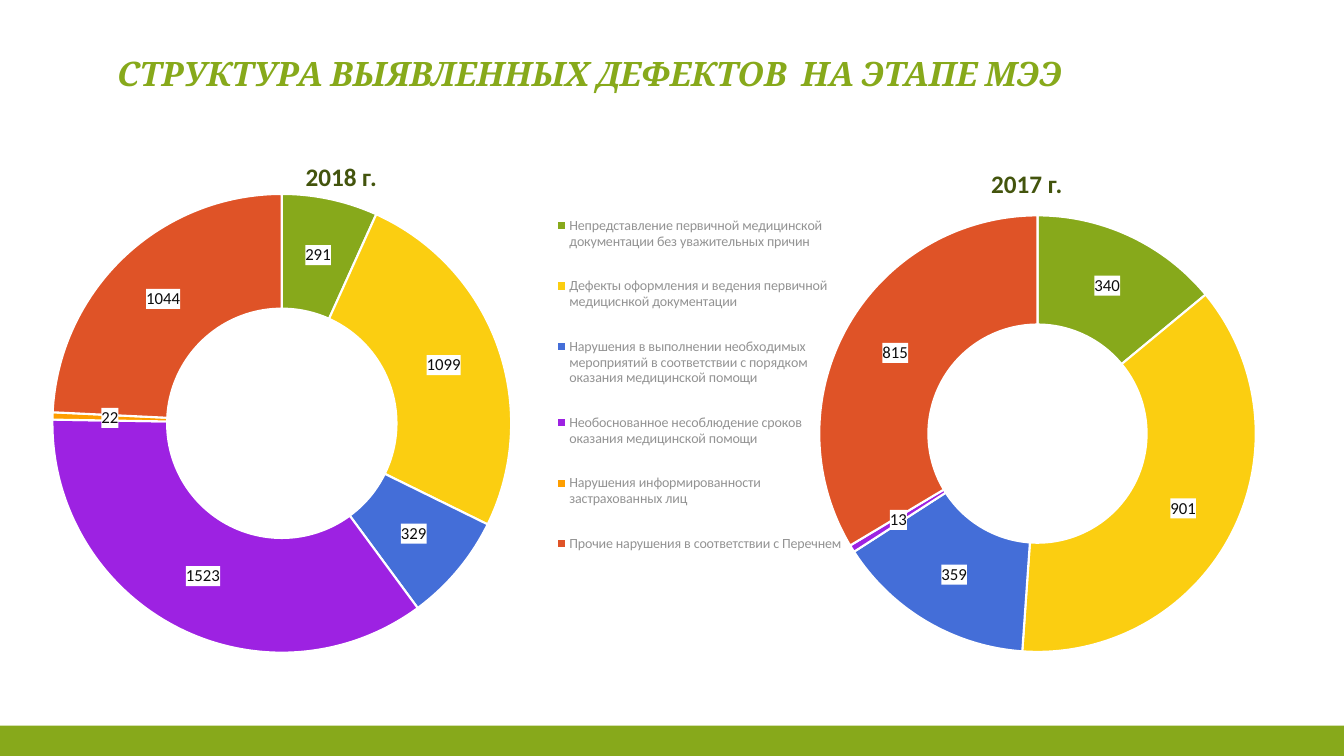
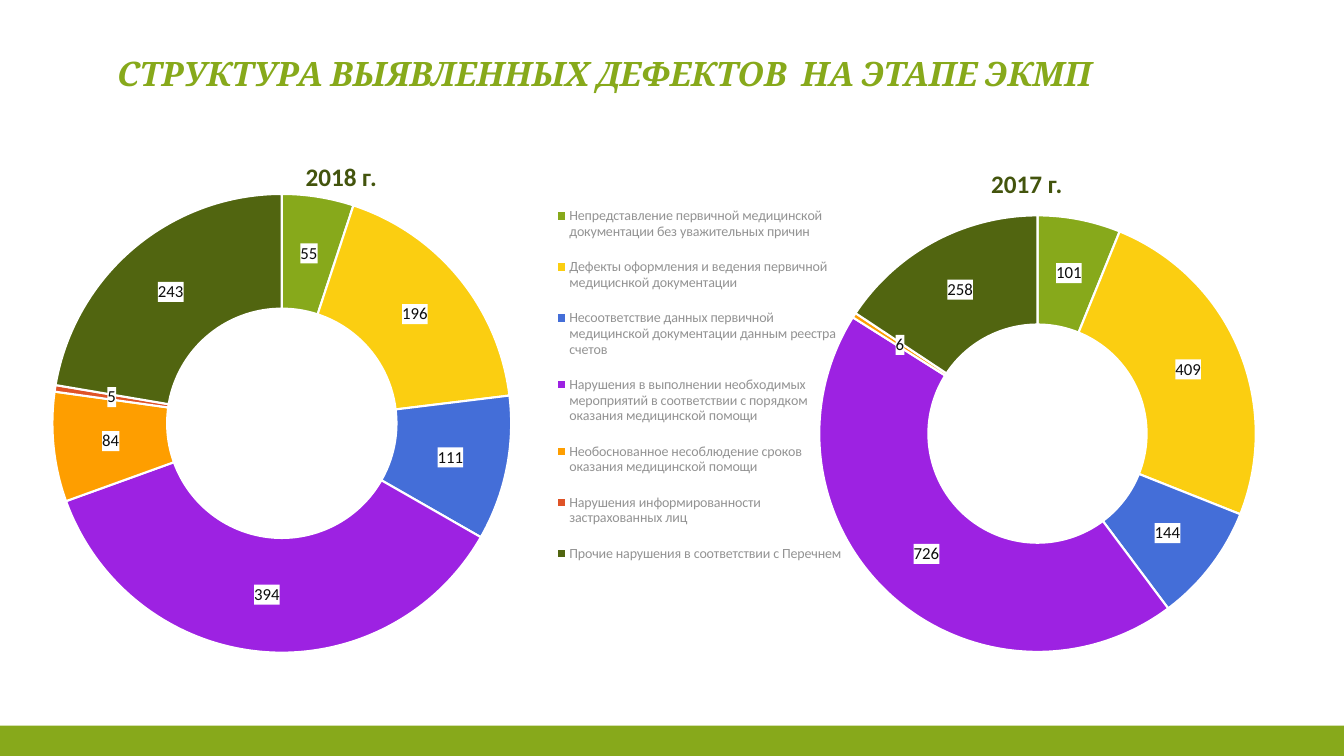
from dataclasses import dataclass

from lxml.etree import SubElement
from pptx import Presentation
from pptx.chart.chart import Chart
from pptx.chart.data import CategoryChartData
from pptx.dml.color import RGBColor
from pptx.enum.chart import XL_CHART_TYPE, XL_LEGEND_POSITION
from pptx.enum.shapes import MSO_SHAPE
from pptx.enum.text import MSO_ANCHOR, MSO_AUTO_SIZE, PP_ALIGN
from pptx.oxml import parse_xml
from pptx.oxml.ns import nsdecls, qn
from pptx.presentation import Presentation as Deck
from pptx.slide import Slide
from pptx.text.text import TextFrame
from pptx.util import Emu, Pt

EMU_PER_PX = 9525
TITLE_ONLY = 5


def px(n: int) -> Emu:
    return Emu(n * EMU_PER_PX)


@dataclass(frozen=True)
class Theme:
    green: str = "87A91B"
    year: str = "43540D"
    legend: str = "939393"
    chart: str = "595959"
    label: str = "0D0D0D"
    white: str = "FFFFFF"
    slices: tuple[str, ...] = (
        "87A91B", "FBCE11", "446ED8", "9D22E2", "FE9E00", "DF5327", "516510",
    )
    title_font: str = "Cambria"
    body_font: str = "Calibri"
    title_pt: int = 24
    year_pt: int = 18
    label_pt: int = 12
    chart_pt: int = 10
    border_pt: float = 1.5


THEME = Theme()


@dataclass(frozen=True)
class Box:
    x: int
    y: int
    w: int
    h: int

    def emu(self) -> tuple[Emu, Emu, Emu, Emu]:
        return px(self.x), px(self.y), px(self.w), px(self.h)


@dataclass(frozen=True)
class Ring:
    year: str
    year_box: Box
    chart_box: Box
    plot: tuple[float, float, float, float]
    has_legend: bool


@dataclass(frozen=True)
class Stage:
    title: str
    defects: tuple[str, ...]
    values: tuple[tuple[int, ...], tuple[int, ...]]


PAGE = Box(0, 0, 1280, 720)
BAND = Box(0, 691, 1280, 29)
TITLE = Box(102, 25, 1119, 69)
LEGEND = (0.64, 0.02, 0.35, 0.76)
RINGS = (
    Ring("2018 г.", Box(231, 134, 188, 69), Box(18, 170, 795, 491),
         (0.04, 0.03, 0.55, 0.89), True),
    Ring("2017 г.", Box(860, 145, 236, 59), Box(760, 100, 507, 620),
         (0.04, 0.16, 0.82, 0.69), False),
)

DOCUMENTS = (
    "Непредставление первичной медицинской документации без уважительных причин",
    "Дефекты оформления и ведения первичной медициснкой документации",
)
REGISTRY = (
    "Несоответствие данных первичной медицинской документации данным реестра счетов",
)
CARE = (
    "Нарушения в выполнении необходимых мероприятий в соответствии с порядком "
    "оказания медицинской помощи",
    "Необоснованное несоблюдение сроков оказания медицинской помощи",
    "Нарушения информированности застрахованных лиц",
    "Прочие нарушения в соответствии с Перечнем",
)
STAGES = (
    Stage("СТРУКТУРА ВЫЯВЛЕННЫХ ДЕФЕКТОВ  НА ЭТАПЕ МЭЭ", DOCUMENTS + CARE,
          ((291, 1099, 329, 1523, 22, 1044), (340, 901, 359, 13, 0, 815))),
    Stage("СТРУКТУРА ВЫЯВЛЕННЫХ ДЕФЕКТОВ  НА ЭТАПЕ ЭКМП", DOCUMENTS + REGISTRY + CARE,
          ((55, 196, 111, 394, 84, 5, 243), (101, 409, 144, 726, 6, 0, 258))),
)


def style_font(font, name: str, size: int, color: str, bold: bool = False,
               italic: bool = False) -> None:
    font.name, font.size, font.bold, font.italic = name, Pt(size), bold, italic
    font.color.rgb = RGBColor.from_string(color)


def set_frame(tf: TextFrame, anchor: MSO_ANCHOR) -> None:
    tf.word_wrap = True
    tf.auto_size = MSO_AUTO_SIZE.NONE
    tf.vertical_anchor = anchor


def add_title(s: Slide, text: str) -> None:
    sp = s.shapes.title
    sp.left, sp.top, sp.width, sp.height = TITLE.emu()
    set_frame(sp.text_frame, MSO_ANCHOR.BOTTOM)
    p = sp.text_frame.paragraphs[0]
    p.alignment, p.line_spacing = PP_ALIGN.LEFT, 0.9
    r = p.add_run()
    r.text = text
    style_font(r.font, THEME.title_font, THEME.title_pt, THEME.green, True, True)


def add_year(s: Slide, ring: Ring) -> None:
    tf = s.shapes.add_textbox(*ring.year_box.emu()).text_frame
    set_frame(tf, MSO_ANCHOR.MIDDLE)
    p = tf.paragraphs[0]
    p.alignment = PP_ALIGN.CENTER
    r = p.add_run()
    r.text = ring.year
    style_font(r.font, THEME.body_font, THEME.year_pt, THEME.year, True)


def make_layout(area: tuple[float, float, float, float], inner: bool):
    layout = parse_xml(f'<c:layout {nsdecls("c")}><c:manualLayout/></c:layout>')
    manual = layout[0]
    settings = [("layoutTarget", "inner")] if inner else []
    settings += [("xMode", "edge"), ("yMode", "edge")]
    settings += list(zip("xywh", map(str, area)))
    for tag, val in settings:
        SubElement(manual, qn(f"c:{tag}")).set("val", val)
    return layout


def place_plot(chart: Chart, ring: Ring) -> None:
    area = chart.element.find(".//" + qn("c:plotArea"))
    for old in area.findall(qn("c:layout")):
        area.remove(old)
    area.insert(0, make_layout(ring.plot, True))


def add_legend(chart: Chart) -> None:
    chart.has_legend = True
    legend = chart.legend
    legend.position = XL_LEGEND_POSITION.RIGHT
    legend.include_in_layout = False
    style_font(legend.font, THEME.body_font, THEME.chart_pt, THEME.legend)
    element = chart.element.find(".//" + qn("c:legend"))
    for old in element.findall(qn("c:layout")):
        element.remove(old)
    element.find(qn("c:legendPos")).addnext(make_layout(LEGEND, False))


def add_labels(chart: Chart, values: tuple[int, ...]) -> None:
    labels = chart.plots[0].series[0].data_labels
    labels.show_value = True
    labels.show_percentage = False
    style_font(labels.font, THEME.body_font, THEME.label_pt, THEME.label)
    element = chart.element.find(f".//{qn('c:ser')}/{qn('c:dLbls')}")
    element.find(qn("c:txPr")).addprevious(parse_xml(
        f'<c:spPr {nsdecls("c", "a")}><a:solidFill>'
        f'<a:srgbClr val="{THEME.white}"/></a:solidFill></c:spPr>'))
    empty = [i for i, value in enumerate(values) if value == 0]
    for pos, i in enumerate(empty):
        element.insert(pos, parse_xml(
            f'<c:dLbl {nsdecls("c")}><c:idx val="{i}"/><c:delete val="1"/></c:dLbl>'))


def add_ring(s: Slide, ring: Ring, defects: tuple[str, ...],
             values: tuple[int, ...]) -> None:
    data = CategoryChartData()
    data.categories = defects if ring.has_legend else [
        str(n) for n in range(1, len(values) + 1)]
    data.add_series("Series 1", values)
    chart = s.shapes.add_chart(
        XL_CHART_TYPE.DOUGHNUT, *ring.chart_box.emu(), data).chart
    chart.has_title = False
    chart.has_legend = False
    style_font(chart.font, THEME.body_font, THEME.chart_pt, THEME.chart)
    plot = chart.plots[0]
    plot.vary_by_categories = True
    series = plot.series[0]
    for i, color in enumerate(THEME.slices[:len(values)]):
        fmt = series.points[i].format
        fmt.fill.solid()
        fmt.fill.fore_color.rgb = RGBColor.from_string(color)
        fmt.line.color.rgb = RGBColor.from_string(THEME.white)
        fmt.line.width = Pt(THEME.border_pt)
    add_labels(chart, values)
    place_plot(chart, ring)
    if ring.has_legend:
        add_legend(chart)


def add_master_band(prs: Deck, s: Slide) -> None:
    band = s.shapes.add_shape(MSO_SHAPE.RECTANGLE, *BAND.emu())
    band.shadow.inherit = False
    band.fill.solid()
    band.fill.fore_color.rgb = RGBColor.from_string(THEME.green)
    band.line.fill.background()
    band.element.nvSpPr.cNvPr.set("id", "99")
    prs.slide_master.shapes.element.insert(2, band.element)


def add_stage(prs: Deck, stage: Stage) -> Slide:
    s = prs.slides.add_slide(prs.slide_layouts[TITLE_ONLY])
    add_title(s, stage.title)
    for ring, values in zip(RINGS, stage.values):
        add_ring(s, ring, stage.defects, values)
    for ring in RINGS:
        add_year(s, ring)
    return s


def main() -> None:
    prs = Presentation()
    prs.slide_width, prs.slide_height = px(PAGE.w), px(PAGE.h)
    slides = [add_stage(prs, stage) for stage in STAGES]
    add_master_band(prs, slides[0])
    prs.save("out.pptx")


if __name__ == "__main__":
    main()
